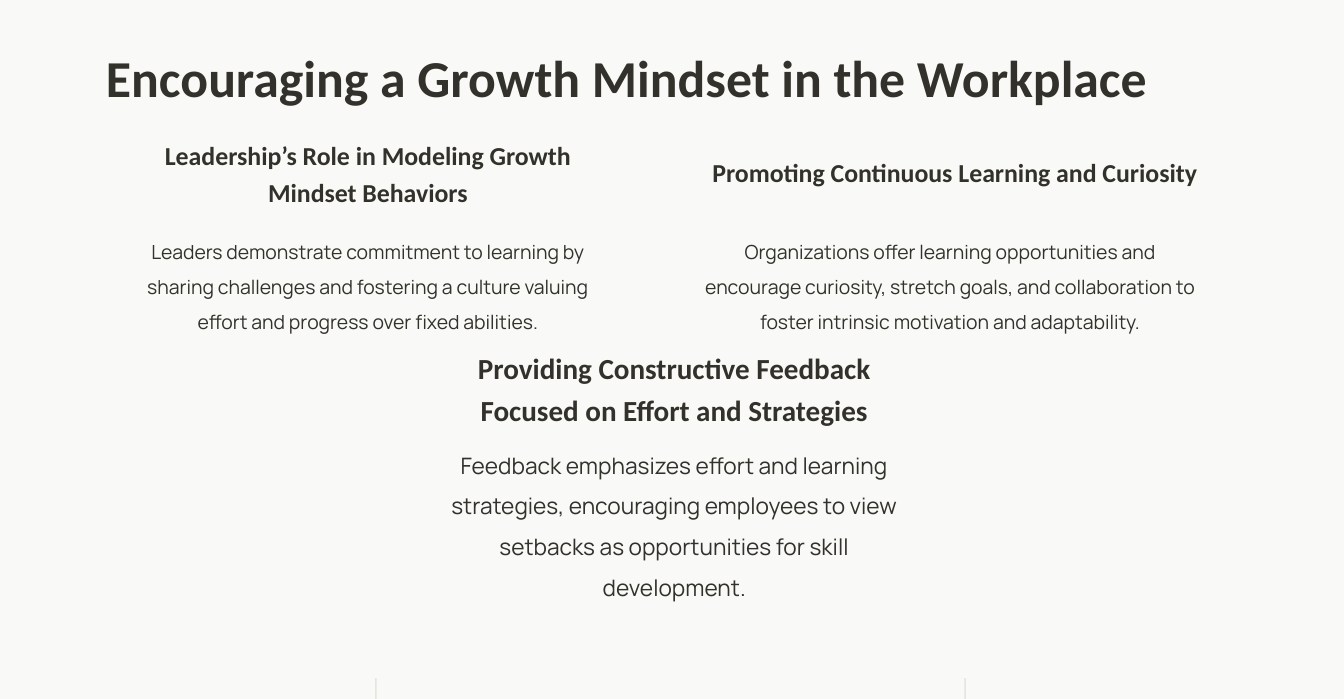
from pptx import Presentation
from pptx.dml.color import RGBColor
from pptx.enum.shapes import MSO_SHAPE
from pptx.enum.text import MSO_ANCHOR, MSO_AUTO_SIZE, PP_ALIGN
from pptx.util import Inches, Pt

WIDTH, HEIGHT = 11.54, 6
PAPER = RGBColor(0xF9, 0xFA, 0xF7)
INK = RGBColor(0x33, 0x31, 0x2B)
RULE = RGBColor(0xE6, 0xE6, 0xDF)
HEAD_FONT, BODY_FONT = "Calibri", "Manrope"

TITLE = "Encouraging a Growth Mindset in the Workplace"
TITLE_BOX = (0.91, -0.12, 9.79, 1.46)
CARD_W, BODY_H = 4.24, 1.5
CARDS = [
    {"head": "Leadership’s Role in Modeling Growth Mindset Behaviors",
     "body": "Leaders demonstrate commitment to learning by sharing challenges and "
             "fostering a culture valuing effort and progress over fixed abilities.",
     "head_at": (1.04, 0.87), "head_h": 1.19, "body_at": (1.04, 1.66), "sizes": (16, 12)},
    {"head": "Providing Constructive Feedback Focused on Effort and Strategies",
     "body": "Feedback emphasizes effort and learning strategies, encouraging "
             "employees to view setbacks as opportunities for skill development.",
     "head_at": (3.67, 2.71), "head_h": 1.19, "body_at": (3.67, 3.71), "sizes": (18, 14)},
    {"head": "Promoting Continuous Learning and Curiosity",
     "body": "Organizations offer learning opportunities and encourage curiosity, "
             "stretch goals, and collaboration to foster intrinsic motivation and "
             "adaptability.",
     "head_at": (6.08, 1.06), "head_h": 0.79, "body_at": (6.04, 1.66), "sizes": (16, 12)},
]
PANELS = [((0, 0, WIDTH, 11.51), PAPER)]
PANELS += [((x, 5.82, 1 / 72, 0.75), RULE) for x in (3.22, 8.28)]


def write(sp, text, size, font=HEAD_FONT, bold=True, align=PP_ALIGN.CENTER, spacing=1.2):
    """Fill a shape with one formatted, vertically centred paragraph."""
    tf = sp.text_frame
    tf.word_wrap = True
    tf.auto_size = MSO_AUTO_SIZE.NONE
    tf.vertical_anchor = MSO_ANCHOR.MIDDLE
    tf.margin_left = tf.margin_top = tf.margin_right = tf.margin_bottom = 0
    p = tf.paragraphs[0]
    p.alignment, p.line_spacing = align, spacing
    r = p.add_run()
    r.text = text
    r.font.name, r.font.size, r.font.bold = font, Pt(size), bold
    r.font.color.rgb = INK


def main():
    """Build the slide and save it."""
    prs = Presentation()
    prs.slide_width, prs.slide_height = Inches(WIDTH), Inches(HEIGHT)
    s = prs.slides.add_slide(prs.slide_layouts[5])

    for box, color in PANELS:
        sp = s.shapes.add_shape(MSO_SHAPE.RECTANGLE, *map(Inches, box))
        sp.shadow.inherit = False
        sp.fill.solid()
        sp.fill.fore_color.rgb = color
        sp.line.fill.background()

    title = s.shapes.title
    title.left, title.top, title.width, title.height = map(Inches, TITLE_BOX)
    write(title, TITLE, 32, align=PP_ALIGN.LEFT)
    s.shapes.element.append(title.element)

    for card in CARDS:
        head_size, body_size = card["sizes"]
        head = s.shapes.add_textbox(*map(Inches, (*card["head_at"], CARD_W, card["head_h"])))
        write(head, card["head"], head_size)
        body = s.shapes.add_textbox(*map(Inches, (*card["body_at"], CARD_W, BODY_H)))
        write(body, card["body"], body_size, font=BODY_FONT, bold=False, spacing=1.5)

    prs.save("out.pptx")


if __name__ == "__main__":
    main()
